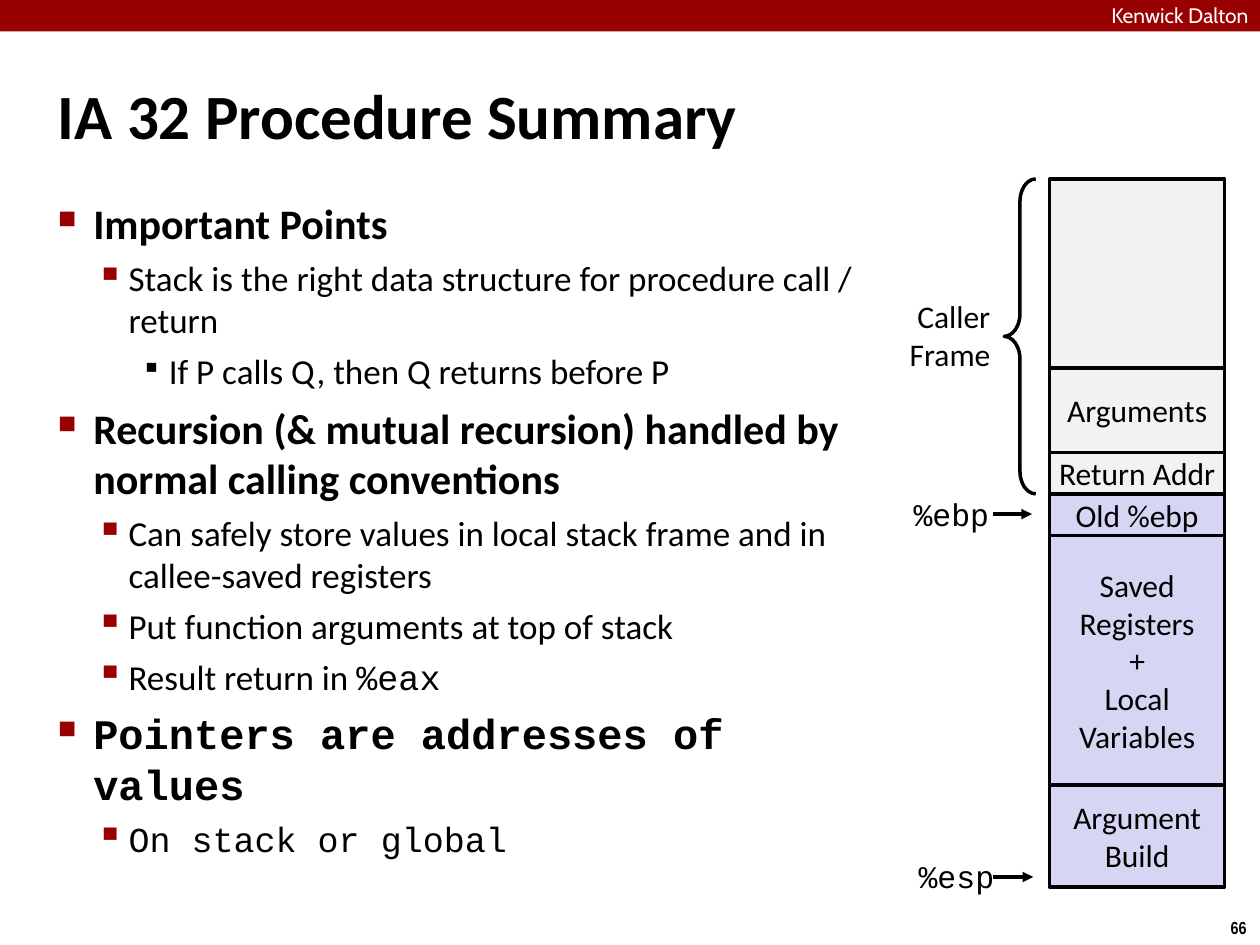
"""Build the IA 32 procedure summary slide with its stack frame diagram."""
from dataclasses import dataclass

import pptx
import pptx.dml.color
import pptx.enum.shapes
import pptx.enum.text
import pptx.oxml.ns
import pptx.util
from lxml import etree

Inches = pptx.util.Inches
Pt = pptx.util.Pt
RGBColor = pptx.dml.color.RGBColor
Align = pptx.enum.text.PP_ALIGN
Anchor = pptx.enum.text.MSO_ANCHOR
Shape = pptx.enum.shapes.MSO_SHAPE

RED = RGBColor(0x99, 0x00, 0x00)
BLACK = RGBColor(0x00, 0x00, 0x00)
WHITE = RGBColor(0xFF, 0xFF, 0xFF)
CALLER_GRAY = RGBColor(0xF2, 0xF2, 0xF2)
CALLEE_BLUE = RGBColor(0xD6, 0xD6, 0xF4)
SANS = "Calibri"
MONO = "Courier New"
STACK_LEFT, STACK_TOP, STACK_WIDTH = 8.33, 1.42, 1.39


@dataclass(frozen=True)
class Span:
    text: str
    font: str = SANS
    size: float = 18
    color: RGBColor = BLACK
    bold: bool = False


@dataclass(frozen=True)
class Level:
    indent: float
    hanging: float
    before: float
    size: float
    bold: bool
    bullet: str
    bullet_color: RGBColor
    bullet_percent: int


@dataclass(frozen=True)
class Point:
    level: int
    pieces: tuple[tuple[str, str], ...]


@dataclass(frozen=True)
class Frame:
    lines: tuple[str, ...]
    height: float
    color: RGBColor


@dataclass(frozen=True)
class Register:
    name: str
    left: float
    top: float
    width: float
    arrow_y: float
    arrow_end: float


LEVELS = (
    Level(0.28, 0.28, 6, 24, True, "■", RED, 60),
    Level(0.56, 0.26, 5, 20, False, "▪", RED, 110),
    Level(0.88, 0.22, 5, 20, False, "▪", BLACK, 80),
)
POINTS = (
    Point(0, (("Important Points", SANS),)),
    Point(1, (("Stack is the right data structure for procedure call / return", SANS),)),
    Point(2, (("If P calls Q, then Q returns before P", SANS),)),
    Point(0, (("Recursion (& mutual recursion) handled by normal calling conventions", SANS),)),
    Point(1, (("Can safely store values in local stack frame and in callee-saved registers", SANS),)),
    Point(1, (("Put function arguments at top of stack", SANS),)),
    Point(1, (("Result return in ", SANS), ("%eax", MONO))),
    Point(0, (("Pointers are addresses of values", MONO),)),
    Point(1, (("On stack or global", MONO),)),
)
FRAMES = (
    Frame((), 1.5, CALLER_GRAY),
    Frame(("Arguments",), 0.67, CALLER_GRAY),
    Frame(("Return Addr",), 0.33, CALLER_GRAY),
    Frame(("Old %ebp",), 0.33, CALLEE_BLUE),
    Frame(("Saved", "Registers", "+", "Local", "Variables"), 1.98, CALLEE_BLUE),
    Frame(("Argument", "Build"), 0.81, CALLEE_BLUE),
)
REGISTERS = (
    Register("%ebp", 6.18, 3.89, 1.71, 4.08, 8.19),
    Register("%esp", 6.31, 6.76, 1.62, 6.96, 8.2),
)


def add_span(para, span: Span) -> None:
    run = para.add_run()
    run.text = span.text
    run.font.name = span.font
    run.font.size = Pt(span.size)
    run.font.bold = span.bold
    run.font.color.rgb = span.color


def prepare(box, margin: float, wrap: bool = True, anchor=Anchor.TOP):
    frame = box.text_frame
    frame.margin_left = frame.margin_right = Inches(margin)
    frame.margin_top = frame.margin_bottom = Inches(margin)
    frame.word_wrap = wrap
    frame.vertical_anchor = anchor
    return frame


def write(frame, spans: list[Span], align) -> None:
    for index, span in enumerate(spans):
        para = frame.add_paragraph() if index else frame.paragraphs[0]
        para.alignment = align
        add_span(para, span)


def add_label(page, area: tuple, spans: list[Span], align, margin: float = 0.04, wrap: bool = True) -> None:
    box = page.shapes.add_textbox(*map(Inches, area))
    write(prepare(box, margin, wrap), spans, align)


def add_block(page, area: tuple, color: RGBColor, outlined: bool):
    block = page.shapes.add_shape(Shape.RECTANGLE, *map(Inches, area))
    block.shadow.inherit = False
    block.fill.solid()
    block.fill.fore_color.rgb = color
    if outlined:
        block.line.color.rgb = BLACK
        block.line.width = Pt(2)
    else:
        block.line.fill.background()
    return block


def add_bullet(para, level: Level) -> None:
    para.space_before = Pt(level.before)
    props = para._p.get_or_add_pPr()
    props.set("marL", str(Inches(level.indent)))
    props.set("indent", str(-Inches(level.hanging)))
    qn = pptx.oxml.ns.qn
    color = etree.SubElement(props, qn("a:buClr"))
    etree.SubElement(color, qn("a:srgbClr"), val=str(level.bullet_color))
    etree.SubElement(props, qn("a:buSzPct"), val=str(level.bullet_percent * 1000))
    etree.SubElement(props, qn("a:buChar"), char=level.bullet)


def add_points(page) -> None:
    box = page.shapes.add_textbox(*map(Inches, (0.42, 1.53, 6.42, 5.72)))
    frame = prepare(box, 0.04)
    for index, point in enumerate(POINTS):
        level = LEVELS[point.level]
        para = frame.add_paragraph() if index else frame.paragraphs[0]
        para.level = point.level
        add_bullet(para, level)
        for text, font in point.pieces:
            add_span(para, Span(text, font, level.size, bold=level.bold))


def add_stack(page) -> None:
    top = STACK_TOP
    for frame in FRAMES:
        block = add_block(page, (STACK_LEFT, top, STACK_WIDTH, frame.height), frame.color, True)
        write(prepare(block, 0, anchor=Anchor.MIDDLE), [Span(line) for line in frame.lines], Align.CENTER)
        top += frame.height


def add_brace(page) -> None:
    brace = page.shapes.add_shape(Shape.LEFT_BRACE, *map(Inches, (7.97, STACK_TOP, 0.25, 2.5)))
    brace.shadow.inherit = False
    brace.adjustments[0] = 0.72
    brace.fill.background()
    brace.line.color.rgb = BLACK
    brace.line.width = Pt(2)


def add_register(page, register: Register) -> None:
    y = Inches(register.arrow_y)
    straight = pptx.enum.shapes.MSO_CONNECTOR.STRAIGHT
    arrow = page.shapes.add_connector(straight, Inches(7.88), y, Inches(register.arrow_end), y)
    arrow.line.color.rgb = BLACK
    arrow.line.width = Pt(2)
    qn = pptx.oxml.ns.qn
    etree.SubElement(arrow.line._get_or_add_ln(), qn("a:tailEnd"), type="triangle")
    etree.SubElement(arrow._element.spPr, qn("a:effectLst"))
    add_label(page, (register.left, register.top, register.width, 0.36), [Span(register.name, MONO)], Align.RIGHT)


def add_title(page) -> None:
    title = page.shapes.title
    title.left, title.top, title.width, title.height = map(Inches, (0.42, 0.28, 9.17, 1.25))
    frame = prepare(title, 0.04, anchor=Anchor.MIDDLE)
    frame.auto_size = pptx.enum.text.MSO_AUTO_SIZE.NONE
    write(frame, [Span("IA 32 Procedure Summary", size=36, bold=True)], Align.LEFT)


def main() -> None:
    deck = pptx.Presentation()
    deck.slide_width, deck.slide_height = Inches(10), Inches(7.5)
    page = deck.slides.add_slide(deck.slide_layouts[5])
    add_label(page, (9.66, 7.23, 0.34, 0.27), [Span("66", "Arial Narrow", 10, bold=True)], Align.CENTER, 0.05, False)
    add_block(page, (0, 0, 10, 0.25), RED, False)
    add_label(page, (8.82, 0.02, 1.44, 0.19), [Span("Kenwick Dalton", "Cabin", 12, WHITE)], Align.LEFT, 0)
    add_title(page)
    add_points(page)
    add_stack(page)
    add_label(page, (7.15, 2.32, 0.75, 0.69), [Span("Caller"), Span("Frame")], Align.RIGHT, wrap=False)
    add_brace(page)
    for register in REGISTERS:
        add_register(page, register)
    deck.save("out.pptx")


if __name__ == "__main__":
    main()
